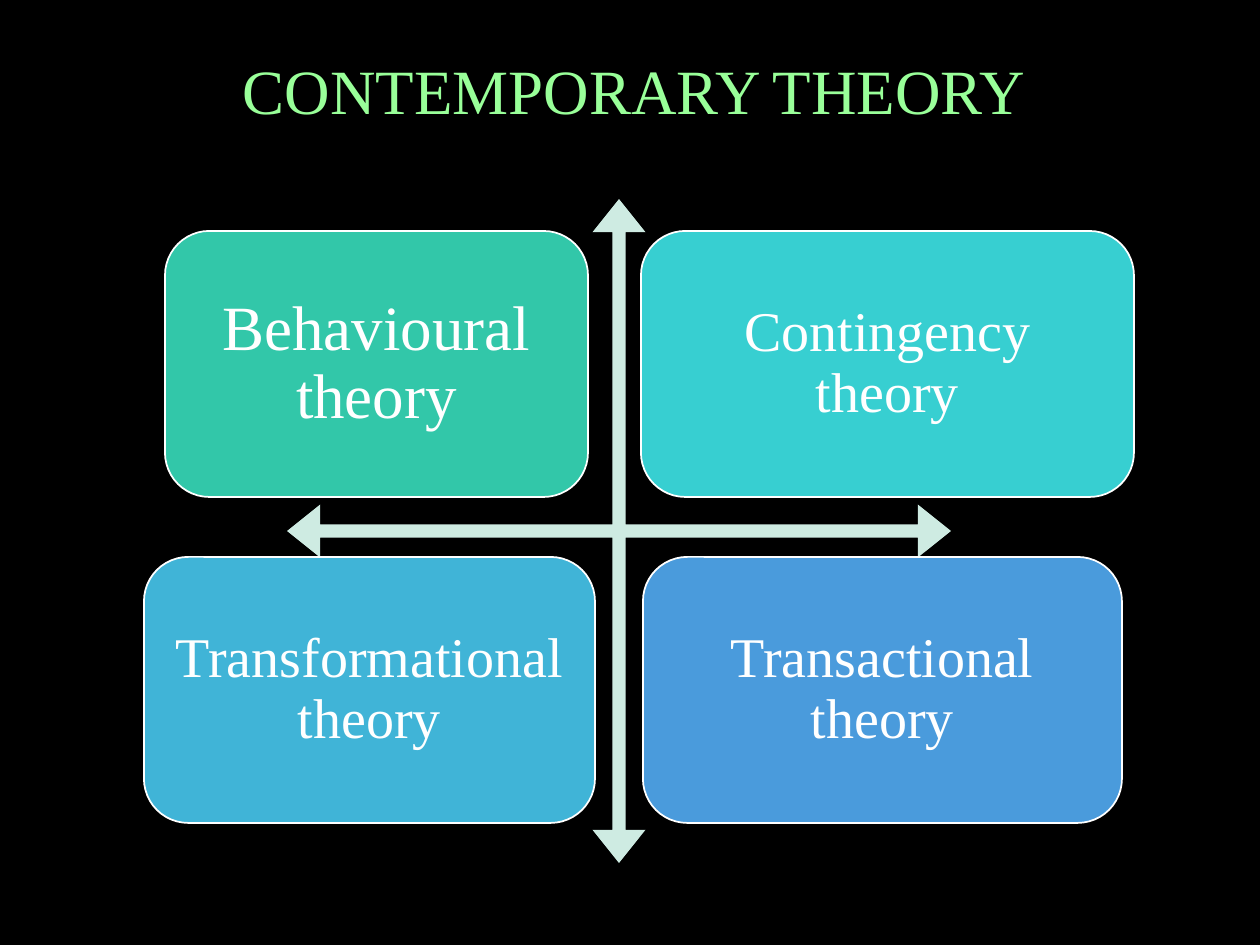
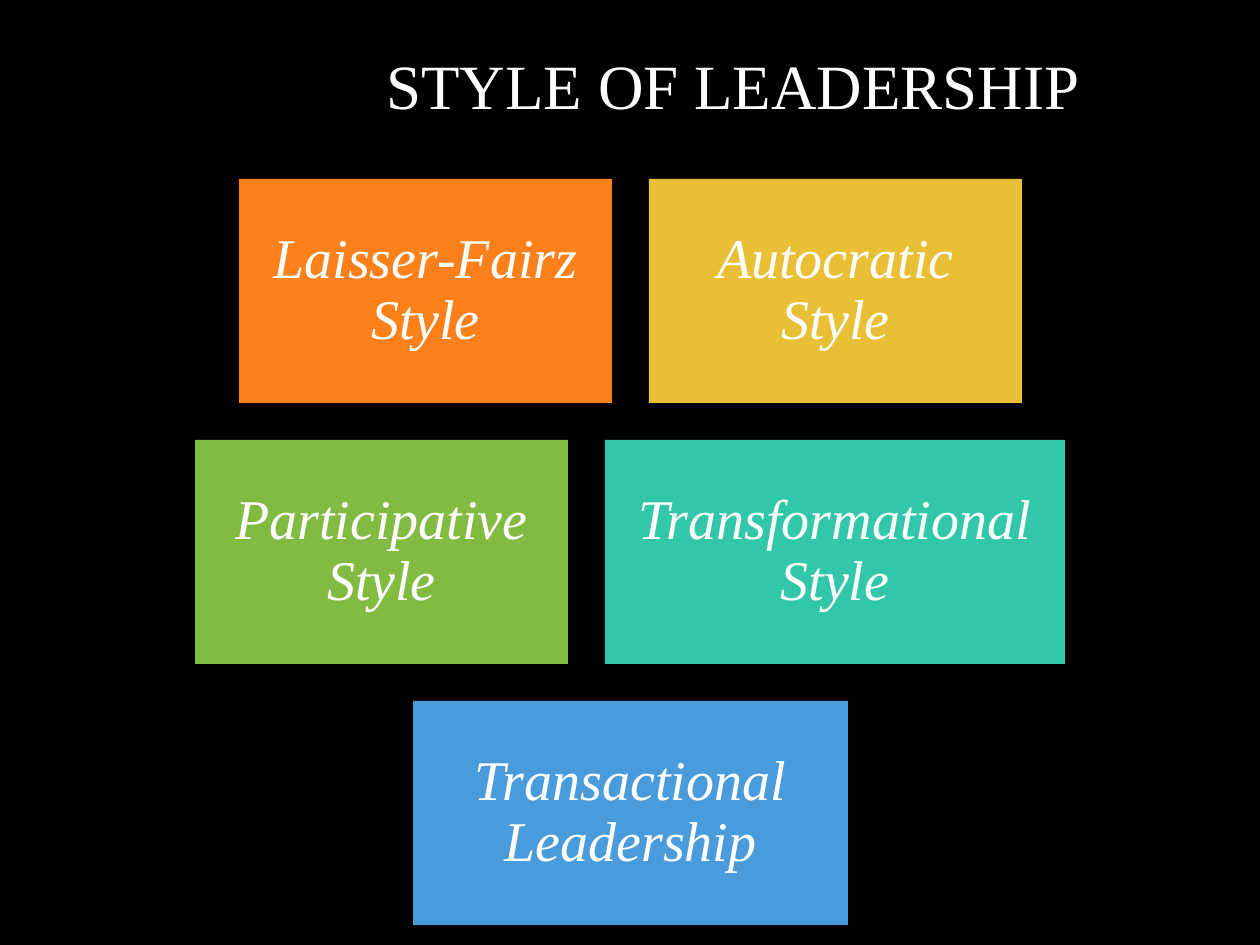
from dataclasses import dataclass

from pptx import Presentation
from pptx.dml.color import RGBColor
from pptx.enum.shapes import MSO_SHAPE
from pptx.enum.text import MSO_ANCHOR, MSO_AUTO_SIZE, PP_ALIGN
from pptx.util import Emu, Pt

SCALE = 914400 / 126  # EMU in one px


def px(length):
    return Emu(round(length * SCALE))


@dataclass(frozen=True)
class Theme:
    font: str = "Times New Roman"
    large: int = 36
    medium: int = 32
    line_spacing: float = 0.9
    black: str = "000000"
    white: str = "FFFFFF"
    mint: str = "99FF99"
    pale: str = "CEEBE2"
    orange: str = "FE801A"
    yellow: str = "E9BF35"
    green: str = "81BB42"
    teal: str = "32C7A9"
    cyan: str = "37CFD1"
    sky: str = "40B4D7"
    blue: str = "4A9BDC"


class SlideBuilder:
    def __init__(self, deck, theme):
        self.deck = deck
        self.theme = theme
        self.page = None
        fill = deck.slide_master.background.fill
        fill.solid()
        fill.fore_color.rgb = RGBColor.from_string(theme.black)

    def add_label(self, box, text, color, size, inset=None, italic=False):
        frame = box.text_frame
        formats = {"word_wrap": True, "auto_size": MSO_AUTO_SIZE.NONE,
                   "vertical_anchor": MSO_ANCHOR.MIDDLE}
        if inset is not None:
            for side in ("left", "right", "top", "bottom"):
                formats[f"margin_{side}"] = px(inset)
        for name, value in formats.items():
            setattr(frame, name, value)
        para = frame.paragraphs[0]
        para.alignment = PP_ALIGN.CENTER
        para.line_spacing = self.theme.line_spacing
        span = para.add_run()
        span.text = text
        for name, value in {"name": self.theme.font, "size": Pt(size),
                            "italic": italic}.items():
            setattr(span.font, name, value)
        span.font.color.rgb = RGBColor.from_string(color)

    def add_page(self, title, place, color):
        self.page = self.deck.slides.add_slide(self.deck.slide_layouts[5])
        box = self.page.shapes.title
        for name, value in zip(("left", "top", "width", "height"), place):
            setattr(box, name, px(value))
        self.add_label(box, title, color, self.theme.large)

    def add_block(self, kind, place, color, outline=None):
        box = self.page.shapes.add_shape(kind, *map(px, place))
        box.shadow.inherit = False
        box.fill.solid()
        box.fill.fore_color.rgb = RGBColor.from_string(color)
        if outline:
            box.line.color.rgb = RGBColor.from_string(outline)
            box.line.width = Pt(1)
        else:
            box.line.fill.background()
        return box


def build_theories(slide):
    theme = slide.theme
    slide.add_page("CONTEMPORARY THEORY", (116, 21, 1036, 147), theme.mint)

    # Crossing arrows behind the four theories
    arrows = slide.add_block(MSO_SHAPE.QUAD_ARROW, (287, 199, 664, 664), theme.pale)
    for index, value in enumerate((0.02, 0.04, 0.05)):
        arrows.adjustments[index] = value

    # Theories: row, left, width, text, colour, type size, inset
    theories = (
        (0, 165, 423, "Behavioural theory", theme.teal, theme.large, 19),
        (0, 641, 493, "Contingency theory", theme.cyan, theme.medium, 16),
        (1, 144, 451, "Transformational theory", theme.sky, theme.medium, 16),
        (1, 643, 479, "Transactional theory", theme.blue, theme.medium, 16),
    )
    top, height, pitch = 231, 266, 326
    for row, left, width, text, color, size, inset in theories:
        place = (left, top + row * pitch, width, height)
        box = slide.add_block(MSO_SHAPE.ROUNDED_RECTANGLE, place, color, theme.white)
        slide.add_label(box, text, theme.white, size, inset)


def build_styles(slide):
    theme = slide.theme
    slide.add_page("STYLE OF LEADERSHIP", (231, 0, 1004, 178), theme.white)

    # Rows of styles, each centred on the page
    rows = (
        ((373, "Laisser-Fairz Style", theme.orange),
         (373, "Autocratic Style", theme.yellow)),
        ((373, "Participative Style", theme.green),
         (460, "Transformational Style", theme.teal)),
        ((435, "Transactional Leadership", theme.blue),),
    )
    center, top, height, gap = 630, 179, 224, 37
    for row in rows:
        row_width = sum(width for width, _, _ in row) + gap * (len(row) - 1)
        left = center - row_width // 2
        for width, text, color in row:
            box = slide.add_block(MSO_SHAPE.RECTANGLE, (left, top, width, height), color)
            slide.add_label(box, text, theme.white, theme.medium, 16, italic=True)
            left += width + gap
        top += height + gap


def main():
    deck = Presentation()
    deck.slide_width, deck.slide_height = px(1260), px(945)
    slide = SlideBuilder(deck, Theme())
    build_theories(slide)
    build_styles(slide)
    deck.save("out.pptx")


if __name__ == "__main__":
    main()
